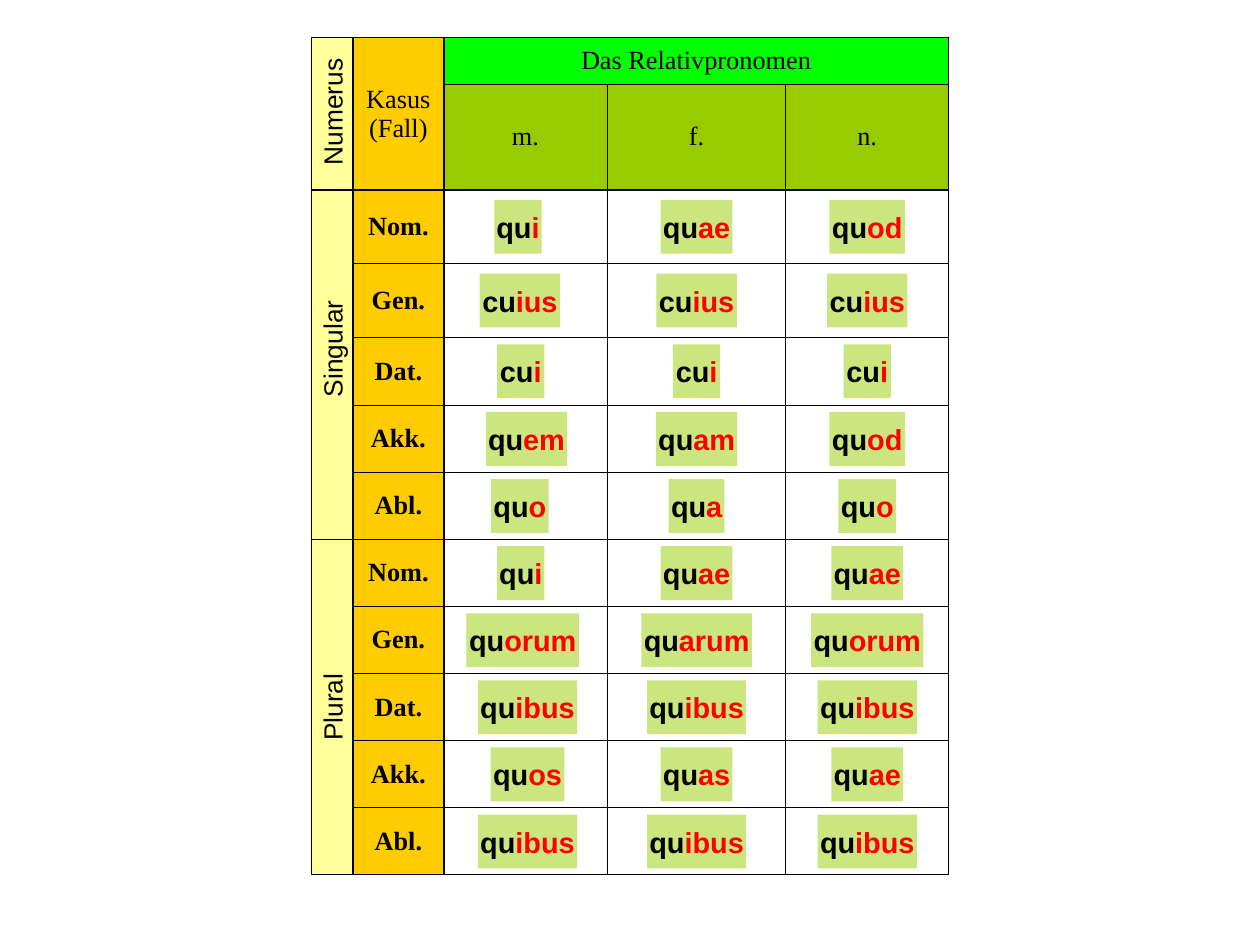
from collections import namedtuple
from dataclasses import dataclass
from itertools import accumulate

from lxml import etree
from pptx import Presentation
from pptx import util as u
from pptx.dml.color import RGBColor
from pptx.enum import shapes, text
from pptx.oxml import ns

Box = namedtuple("Box", "left top width height")


@dataclass(frozen=True)
class Theme:
    ink: str = "000000"
    ending: str = "FF0000"
    number: str = "FFFF99"
    case: str = "FFCC00"
    title: str = "00FF00"
    gender: str = "99CC00"
    serif: str = "Times New Roman"
    sans: str = "Arial"
    label_size: int = 20
    word_size: int = 22
    thin: int = 1
    thick: int = 2


THEME = Theme()
SLIDE_WIDTH, SLIDE_HEIGHT = 13.33, 10
COLUMNS = [0.44, 0.96, 1.73, 1.89, 1.72]
ROWS = [0.49, 1.12, 0.78, 0.78, 0.72] + [0.71] * 7
COLUMN_EDGES = list(accumulate(COLUMNS, initial=0))
ROW_EDGES = list(accumulate(ROWS, initial=0))
HEADER_ROWS, CASE_COLUMN, FIRST_FORM = 2, 1, 2

CASES = ["Nom.", "Gen.", "Dat.", "Akk.", "Abl."]
GENDERS = ["m.", "f.", "n."]
FORMS = [
    "qu-i qu-ae qu-od", "cu-ius cu-ius cu-ius", "cu-i cu-i cu-i",
    "qu-em qu-am qu-od", "qu-o qu-a qu-o",
    "qu-i qu-ae qu-ae", "qu-orum qu-arum qu-orum", "qu-ibus qu-ibus qu-ibus",
    "qu-os qu-as qu-ae", "qu-ibus qu-ibus qu-ibus",
]
MASCULINE_SHIFTS = [-0.08, -0.06, -0.05, 0.01, -0.06, -0.05, -0.03, 0.02, 0.02, 0.02]
ENDING_WIDTHS = {
    "i": 0.5, "ius": 0.85, "em": 0.86, "o": 0.61, "orum": 1.19, "ibus": 1.05, "os": 0.78,
    "ae": 0.76, "a": 0.59, "am": 0.86, "as": 0.76, "od": 0.8, "arum": 1.17,
}
WORD_HEIGHT, LABEL_HEIGHT = 0.57, 0.54
NUMBER_LABELS = [
    ("Numerus", 0, 2, 1.18, -0.02),
    ("Singular", 2, 7, 1.07, -0.17),
    ("Plural", 7, 12, 0.76, 0),
]


def write(frame, content, color=THEME.ink, size=THEME.label_size, font=THEME.sans, bold=False):
    para = frame.paragraphs[0]
    para.alignment = text.PP_ALIGN.CENTER
    for index, line in enumerate(content.split("\n")):
        if index:
            para.add_line_break()
        span = para.add_run()
        span.text = line
        span.font.name = font
        span.font.size = u.Pt(size)
        span.font.bold = bold
        span.font.color.rgb = RGBColor.from_string(color)


def fit_frame(frame):
    frame.margin_left = frame.margin_right = u.Inches(0.02)
    frame.margin_top = frame.margin_bottom = u.Inches(0.1)
    frame.word_wrap = False
    frame.auto_size = text.MSO_AUTO_SIZE.SHAPE_TO_FIT_TEXT
    frame.vertical_anchor = text.MSO_ANCHOR.MIDDLE


def centred(x, y, width, height):
    return [u.Inches(value) for value in (x - width / 2, y - height / 2, width, height)]


def draw_borders(cell, row, column):
    last_row = HEADER_ROWS - 1 if row == 0 and column < FIRST_FORM else row
    heavy = {
        "lnL": column == FIRST_FORM,
        "lnR": column == CASE_COLUMN,
        "lnT": row == HEADER_ROWS,
        "lnB": last_row == HEADER_ROWS - 1,
    }
    properties = cell._tc.get_or_add_tcPr()
    for edge, is_heavy in heavy.items():
        width = u.Pt(THEME.thick if is_heavy else THEME.thin)
        line = etree.SubElement(properties, ns.qn(f"a:{edge}"), w=str(int(width)))
        paint = etree.SubElement(line, ns.qn("a:solidFill"))
        etree.SubElement(paint, ns.qn("a:srgbClr"), val=THEME.ink)


def cell_color(row, column):
    if column == 0:
        return THEME.number
    if column == CASE_COLUMN:
        return THEME.case
    return {0: THEME.title, 1: THEME.gender}.get(row)


def add_grid(page, box):
    frame = page.shapes.add_table(len(ROWS), len(COLUMNS), *[u.Inches(side) for side in box])
    table = frame.table
    table.first_row = table.horz_banding = False
    for column, width in zip(table.columns, COLUMNS):
        column.width = u.Inches(width)
    for row, height in zip(table.rows, ROWS):
        row.height = u.Inches(height)
    for row in range(len(ROWS)):
        for column in range(len(COLUMNS)):
            cell = table.cell(row, column)
            draw_borders(cell, row, column)
            color = cell_color(row, column)
            if color:
                cell.fill.solid()
                cell.fill.fore_color.rgb = RGBColor.from_string(color)
            else:
                cell.fill.background()
    for first, last in [((0, 0), (1, 0)), ((0, 1), (1, 1)), ((0, 2), (0, 4)),
                        ((2, 0), (6, 0)), ((7, 0), (11, 0))]:
        table.cell(*first).merge(table.cell(*last))
    labels = {(0, CASE_COLUMN): "Kasus\n(Fall)", (0, FIRST_FORM): "Das Relativpronomen"}
    labels.update({(1, FIRST_FORM + index): gender for index, gender in enumerate(GENDERS)})
    labels.update({(HEADER_ROWS + index, CASE_COLUMN): case for index, case in enumerate(CASES * 2)})
    for (row, column), label in labels.items():
        cell = table.cell(row, column)
        cell.vertical_anchor = text.MSO_ANCHOR.MIDDLE
        write(cell.text_frame, label, font=THEME.serif, bold=row >= HEADER_ROWS)


def add_word(page, x, y, stem, ending):
    shape = page.shapes.add_shape(
        shapes.MSO_SHAPE.RECTANGLE, *centred(x, y, ENDING_WIDTHS[ending], WORD_HEIGHT))
    shape.shadow.inherit = False
    shape.line.fill.background()
    shape.fill.solid()
    shape.fill.fore_color.rgb = RGBColor.from_string(THEME.gender)
    paint = shape.element.spPr.find(ns.qn("a:solidFill"))
    etree.SubElement(paint[0], ns.qn("a:alpha"), val="50000")
    fit_frame(shape.text_frame)
    write(shape.text_frame, stem, size=THEME.word_size, bold=True)
    write(shape.text_frame, ending, color=THEME.ending, size=THEME.word_size, bold=True)


def add_forms(page, box):
    for index, (forms, shift) in enumerate(zip(FORMS, MASCULINE_SHIFTS)):
        row = HEADER_ROWS + index
        y = box.top + (ROW_EDGES[row] + ROW_EDGES[row + 1]) / 2
        for column, form in enumerate(forms.split(), FIRST_FORM):
            x = box.left + (COLUMN_EDGES[column] + COLUMN_EDGES[column + 1]) / 2
            add_word(page, x + shift * (column == FIRST_FORM), y, *form.split("-"))


def add_number_labels(page, box):
    x = box.left + COLUMNS[0] / 2
    for label, first, last, width, shift in NUMBER_LABELS:
        y = box.top + (ROW_EDGES[first] + ROW_EDGES[last]) / 2 + shift
        shape = page.shapes.add_textbox(*centred(x, y, width, LABEL_HEIGHT))
        shape.rotation = 270
        fit_frame(shape.text_frame)
        write(shape.text_frame, label)


def main():
    deck = Presentation()
    deck.slide_width, deck.slide_height = u.Inches(SLIDE_WIDTH), u.Inches(SLIDE_HEIGHT)
    page = deck.slides.add_slide(deck.slide_layouts[6])
    width, height = sum(COLUMNS), sum(ROWS)
    box = Box((SLIDE_WIDTH - width) / 2, SLIDE_HEIGHT * 0.04, width, height)
    add_grid(page, box)
    add_forms(page, box)
    add_number_labels(page, box)
    deck.save("out.pptx")


if __name__ == "__main__":
    main()
